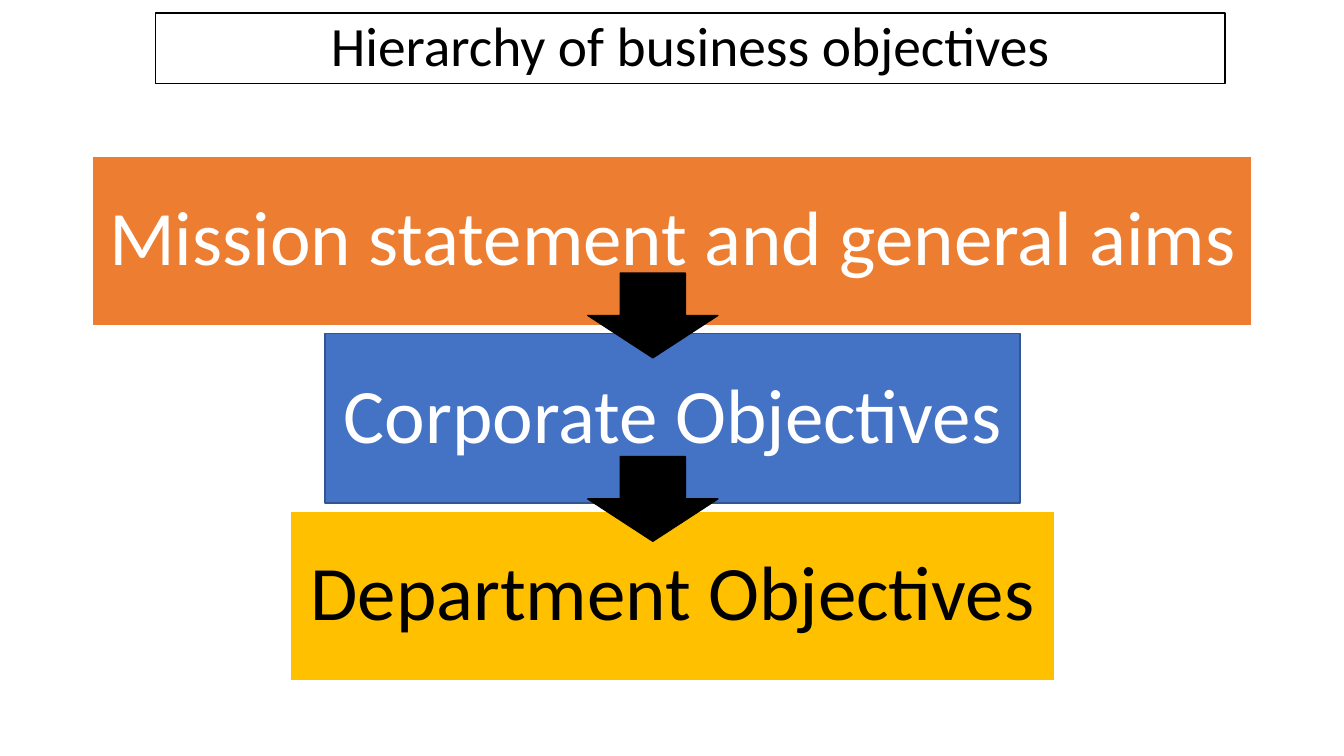
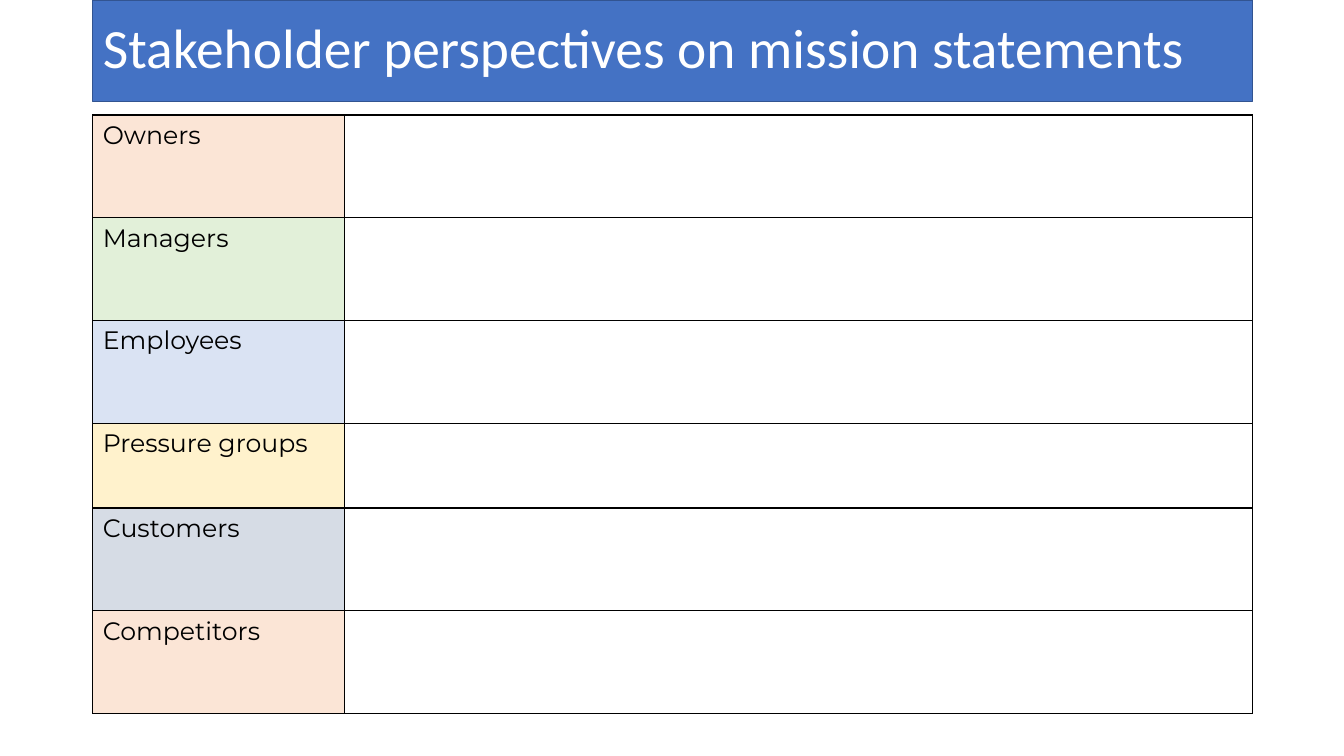
from pptx import Presentation
from pptx.dml.color import RGBColor
from pptx.enum.shapes import MSO_SHAPE as Shape
from pptx.enum.text import MSO_ANCHOR as Anchor, MSO_AUTO_SIZE as AutoSize, PP_ALIGN as Align
from pptx.oxml import parse_xml
from pptx.oxml.ns import nsdecls
from pptx.util import Inches, Pt

BLACK, WHITE = "000000", "FFFFFF"
ORANGE, BLUE, GOLD = "ED7D31", "4472C4", "FFC000"
BLUE_EDGE = "325491"
HEADING_FONT, TABLE_FONT = "Calibri", "Montserrat"
TITLE_ONLY = 5

LEVELS = [  # text, width, fill, edge, text colour
    ("Mission statement and general aims", 11.5, ORANGE, WHITE, WHITE),
    ("Corporate Objectives", 6.89, BLUE, BLUE_EDGE, WHITE),
    ("Department Objectives", 7.59, GOLD, WHITE, BLACK),
]
STAKEHOLDERS = [  # name, label fill, row height
    ("Owners", "FBE5D6", 1.02),
    ("Managers", "E2F0D9", 1.02),
    ("Employees", "DAE3F3", 1.02),
    ("Pressure groups", "FFF2CC", 0.84),
    ("Customers", "D6DCE5", 1.02),
    ("Competitors", "FBE5D6", 1.02),
]


def colour(value):
    return RGBColor.from_string(value)


def paint(shape, fill, edge):
    shape.fill.solid()
    shape.fill.fore_color.rgb = colour(fill)
    shape.line.color.rgb = colour(edge)
    shape.line.width = Pt(1)


def write(frame, text, size, font, ink, align=Align.LEFT, spacing=None):
    para = frame.paragraphs[0]
    para.alignment = align
    para.line_spacing = spacing
    span = para.add_run()
    span.text = text
    span.font.size = Pt(size)
    span.font.name = font
    span.font.color.rgb = colour(ink)


def add_page(deck, title, area, fill, edge, ink, align):
    """Add a slide whose title is a filled, outlined box."""
    page = deck.slides.add_slide(deck.slide_layouts[TITLE_ONLY])
    box = page.shapes.title
    box.left, box.top, box.width, box.height = map(Inches, area)
    paint(box, fill, edge)
    frame = box.text_frame
    frame.auto_size = AutoSize.NONE
    frame.vertical_anchor = Anchor.MIDDLE
    write(frame, title, 39.6, HEADING_FONT, ink, align, 0.9)
    return page


def add_block(page, kind, left, top, width, height, fill, edge):
    block = page.shapes.add_shape(kind, *map(Inches, (left, top, width, height)))
    block.shadow.inherit = False
    paint(block, fill, edge)
    return block


def add_hierarchy(page, left, top, width):
    """Stack the levels, centred in the given width, with arrows between."""
    height, pitch = 1.68, 1.76
    for index, (text, level_width, fill, edge, ink) in enumerate(LEVELS):
        level_left = left + (width - level_width) / 2
        level = add_block(page, Shape.RECTANGLE, level_left, top + index * pitch,
                          level_width, height, fill, edge)
        frame = level.text_frame
        frame.word_wrap = True
        frame.margin_left = frame.margin_right = Inches(0.1)
        frame.vertical_anchor = Anchor.MIDDLE
        write(frame, text, 55, HEADING_FONT, ink, Align.CENTER, 0.9)

    # Arrows lie over the joints between levels
    for index in range(len(LEVELS) - 1):
        add_block(page, Shape.DOWN_ARROW, left + 4.91, top + 1.16 + index * 1.82,
                  1.29, 0.84, BLACK, BLACK)


def format_cell(cell, fill):
    cell.fill.solid()
    cell.fill.fore_color.rgb = colour(fill)
    properties = cell._tc.get_or_add_tcPr()
    # Borders come before the fill
    for index, side in enumerate("LRTB"):
        properties.insert(index, parse_xml(
            f'<a:ln{side} {nsdecls("a")} w="12700"><a:solidFill>'
            f'<a:srgbClr val="{BLACK}"/></a:solidFill></a:ln{side}>'))


def add_stakeholder_table(page, left, top, width):
    """Put names in a tinted first column, leaving the second blank."""
    label_width = 2.5
    total = sum(height for _, _, height in STAKEHOLDERS)
    table = page.shapes.add_table(len(STAKEHOLDERS), 2,
                                  *map(Inches, (left, top, width, total))).table
    table.first_row = table.horz_banding = False
    table.columns[0].width = Inches(label_width)
    table.columns[1].width = Inches(width - label_width)
    for row, (name, tint, height) in zip(table.rows, STAKEHOLDERS):
        row.height = Inches(height)
        label, answer = row.cells
        format_cell(label, tint)
        format_cell(answer, WHITE)
        write(label.text_frame, name, 18, TABLE_FONT, BLACK)


def main():
    deck = Presentation()
    deck.slide_width, deck.slide_height = Inches(13.33), Inches(7.5)

    page = add_page(deck, "Hierarchy of business objectives",
                    (1.54, 0.13, 10.61, 0.7), WHITE, BLACK, BLACK, Align.CENTER)
    add_hierarchy(page, 0.92, 1.55, 11.5)

    page = add_page(deck, "Stakeholder perspectives on mission statements",
                    (0.92, 0, 11.5, 1.01), BLUE, BLUE_EDGE, WHITE, Align.LEFT)
    add_stakeholder_table(page, 0.92, 1.14, 11.5)

    deck.save("out.pptx")


if __name__ == "__main__":
    main()
